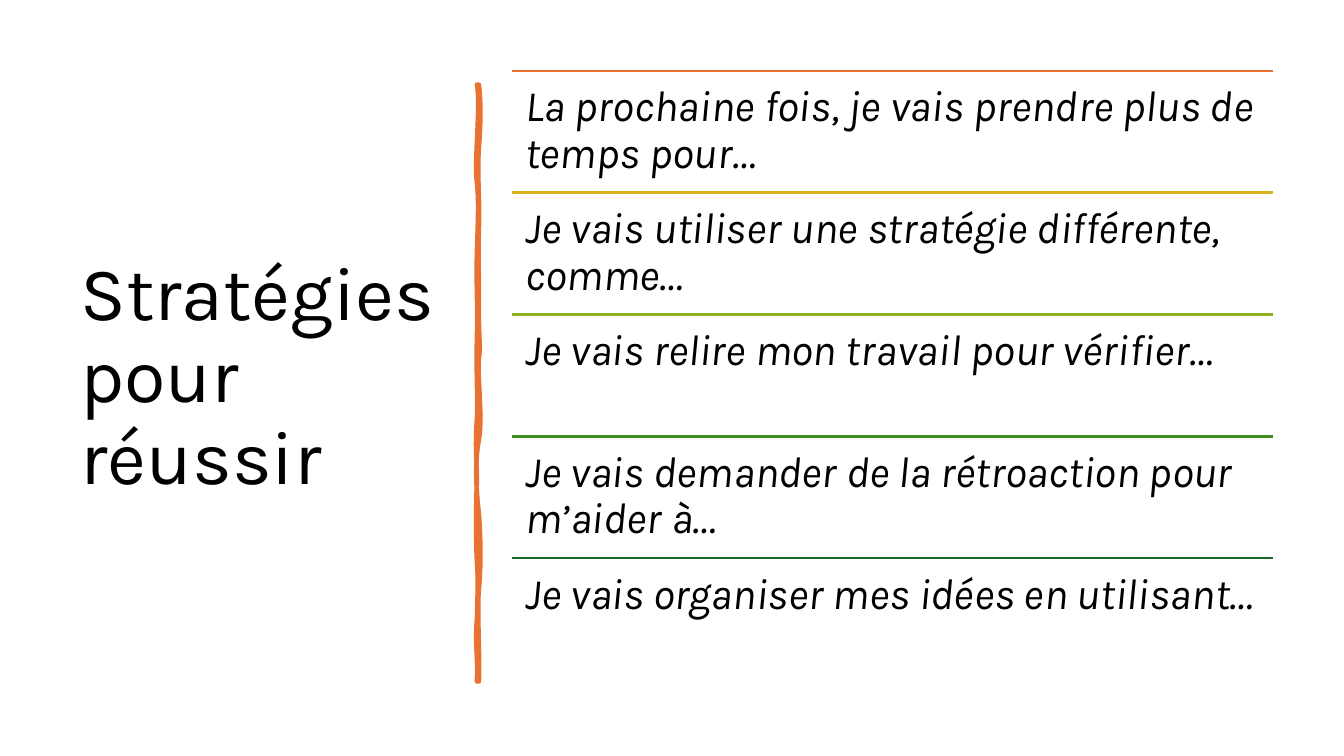
from lxml import etree
from pptx import Presentation
from pptx.dml.color import RGBColor
from pptx.enum.shapes import MSO_CONNECTOR
from pptx.enum.text import MSO_ANCHOR
from pptx.oxml.ns import qn
from pptx.util import Inches, Pt

STRAIGHT = MSO_CONNECTOR.STRAIGHT
TOP, MIDDLE = MSO_ANCHOR.TOP, MSO_ANCHOR.MIDDLE
FONT = "Karla"
BLACK, ORANGE = "000000", "E97132"

# Strategy list: rule colour and sentence starter
STRATEGIES = [
    (ORANGE, "La prochaine fois, je vais prendre plus de temps pour…"),
    ("D8B11D", "Je vais utiliser une stratégie différente, comme…"),
    ("8EB21E", "Je vais relire mon travail pour vérifier…"),
    ("408E1C", "Je vais demander de la rétroaction pour m’aider à…"),
    ("196B24", "Je vais organiser mes idées en utilisant…"),
]
LIST_LEFT, LIST_TOP, LIST_WIDTH, ROW_HEIGHT = 5.08, 0.7, 7.55, 1.21

# Hand-drawn bar, a flat shape turned upright; each cubic curve has
# two controls and an end point, in inches on the slide
BAR_LEFT, BAR_TOP, BAR_LENGTH, BAR_THICKNESS = 1.78, 3.79, 5.92, 0.02
BAR_START = (4.75, 0.84)
STROKE_CURVES = [
    (4.77, 1.02, 4.77, 1.19, 4.75, 1.46), (4.73, 1.73, 4.76, 1.95, 4.75, 2.26),
    (4.74, 2.57, 4.75, 2.62, 4.75, 2.94), (4.74, 3.25, 4.77, 3.42, 4.75, 3.56),
    (4.73, 3.7, 4.79, 4.14, 4.75, 4.36), (4.71, 4.57, 4.72, 4.84, 4.75, 5.1),
    (4.77, 5.36, 4.77, 5.64, 4.75, 5.84), (4.73, 6.03, 4.76, 6.5, 4.75, 6.76),
    (4.74, 6.76, 4.73, 6.76, 4.73, 6.76), (4.74, 6.46, 4.71, 6.44, 4.73, 6.13),
    (4.74, 5.83, 4.74, 5.7, 4.73, 5.57), (4.72, 5.44, 4.72, 4.95, 4.73, 4.77),
    (4.73, 4.59, 4.71, 4.45, 4.73, 4.15), (4.74, 3.86, 4.72, 3.73, 4.73, 3.35),
    (4.74, 2.98, 4.72, 2.81, 4.73, 2.5), (4.74, 2.18, 4.75, 2, 4.73, 1.81),
    (4.7, 1.63, 4.77, 1.04, 4.73, 0.84), (4.74, 0.84, 4.74, 0.84, 4.75, 0.84),
]
FILL_CURVES = [
    (4.75, 1.15, 4.72, 1.25, 4.75, 1.52), (4.77, 1.79, 4.74, 1.97, 4.75, 2.08),
    (4.76, 2.2, 4.74, 2.55, 4.75, 2.94), (4.76, 3.33, 4.73, 3.43, 4.75, 3.62),
    (4.77, 3.81, 4.77, 3.97, 4.75, 4.3), (4.72, 4.63, 4.75, 4.74, 4.75, 5.16),
    (4.75, 5.57, 4.74, 5.53, 4.75, 5.78), (4.76, 6.03, 4.74, 6.47, 4.75, 6.76),
    (4.74, 6.75, 4.73, 6.75, 4.73, 6.76), (4.7, 6.49, 4.74, 6.32, 4.73, 6.13),
    (4.72, 5.95, 4.75, 5.69, 4.73, 5.39), (4.71, 5.1, 4.76, 5, 4.73, 4.71),
    (4.7, 4.42, 4.77, 4.2, 4.73, 3.86), (4.69, 3.51, 4.74, 3.25, 4.73, 3),
    (4.71, 2.75, 4.71, 2.59, 4.73, 2.38), (4.74, 2.16, 4.74, 1.85, 4.73, 1.64),
    (4.71, 1.43, 4.75, 1.21, 4.73, 0.84), (4.74, 0.84, 4.74, 0.84, 4.75, 0.84),
]


def rgb(value):
    return RGBColor.from_string(value)


def add_text(s, box, text, size, anchor, insets, italic=False):
    tf = s.shapes.add_textbox(*map(Inches, box)).text_frame
    side, edge = map(Inches, insets)
    frame_format = {
        "word_wrap": True, "vertical_anchor": anchor,
        "margin_left": side, "margin_right": side,
        "margin_top": edge, "margin_bottom": edge,
    }
    for name, value in frame_format.items():
        setattr(tf, name, value)
    p = tf.paragraphs[0]
    p.line_spacing = 0.9
    r = p.add_run()
    r.text = text
    for name, value in {"name": FONT, "size": Pt(size), "italic": italic}.items():
        setattr(r.font, name, value)
    r.font.color.rgb = rgb(BLACK)


def add_rule(s, left, top, width, color):
    rule = s.shapes.add_connector(
        STRAIGHT, Inches(left), Inches(top), Inches(left + width), Inches(top))
    rule.line.color.rgb = rgb(color)
    rule.line.width = Pt(1.5)
    etree.SubElement(rule._element.spPr, qn("a:effectLst"))


def add_curve_path(path_list, curves, **options):
    """Add a closed outline, turned from slide to flat bar coordinates."""
    outline = etree.SubElement(
        path_list, qn("a:path"), w=str(Inches(BAR_LENGTH)),
        h=str(Inches(BAR_THICKNESS)), **options)

    def add_step(tag, values):
        step = etree.SubElement(outline, qn(tag))
        for x, y in zip(values[::2], values[1::2]):
            etree.SubElement(step, qn("a:pt"), x=str(Inches(y - BAR_START[1])),
                             y=str(Inches(BAR_START[0] - x)))

    add_step("a:moveTo", BAR_START)
    for curve in curves:
        add_step("a:cubicBezTo", curve)
    etree.SubElement(outline, qn("a:close"))


def add_bar(s):
    left, top = Inches(BAR_LEFT), Inches(BAR_TOP)
    right, bottom = left + Inches(BAR_LENGTH), top + Inches(BAR_THICKNESS)
    builder = s.shapes.build_freeform(left, top)
    builder.add_line_segments([(right, top), (right, bottom), (left, bottom)])
    sp = builder.convert_to_shape()
    sp.shadow.inherit = False
    sp.rotation = 90
    sp.fill.solid()
    sp.fill.fore_color.rgb = rgb(ORANGE)
    sp.line.color.rgb = rgb(ORANGE)
    sp.line.width = Pt(3.25)
    etree.SubElement(sp.line._get_or_add_ln(), qn("a:round"))

    # Stroked outline and filled body in one shape
    path_list = sp._element.spPr.find(".//" + qn("a:pathLst"))
    path_list.remove(path_list[0])
    add_curve_path(path_list, STROKE_CURVES, fill="none")
    add_curve_path(path_list, FILL_CURVES, stroke="0")


def main():
    prs = Presentation()
    prs.slide_width, prs.slide_height = Inches(13.33), Inches(7.5)
    s = prs.slides.add_slide(prs.slide_layouts[6])

    # Title and dividing bar
    add_text(s, (0.7, 0.7, 3.74, 6.1), "Stratégies pour réussir", 54,
             MIDDLE, (0.1, 0.05))
    add_bar(s)

    # Ruled list of strategies
    for i, (color, text) in enumerate(STRATEGIES):
        top = LIST_TOP + i * ROW_HEIGHT
        add_rule(s, LIST_LEFT, top, LIST_WIDTH, color)
        add_text(s, (LIST_LEFT, top, LIST_WIDTH, ROW_HEIGHT), text, 31,
                 TOP, (0.13, 0.13), italic=True)

    prs.save("out.pptx")


if __name__ == "__main__":
    main()
